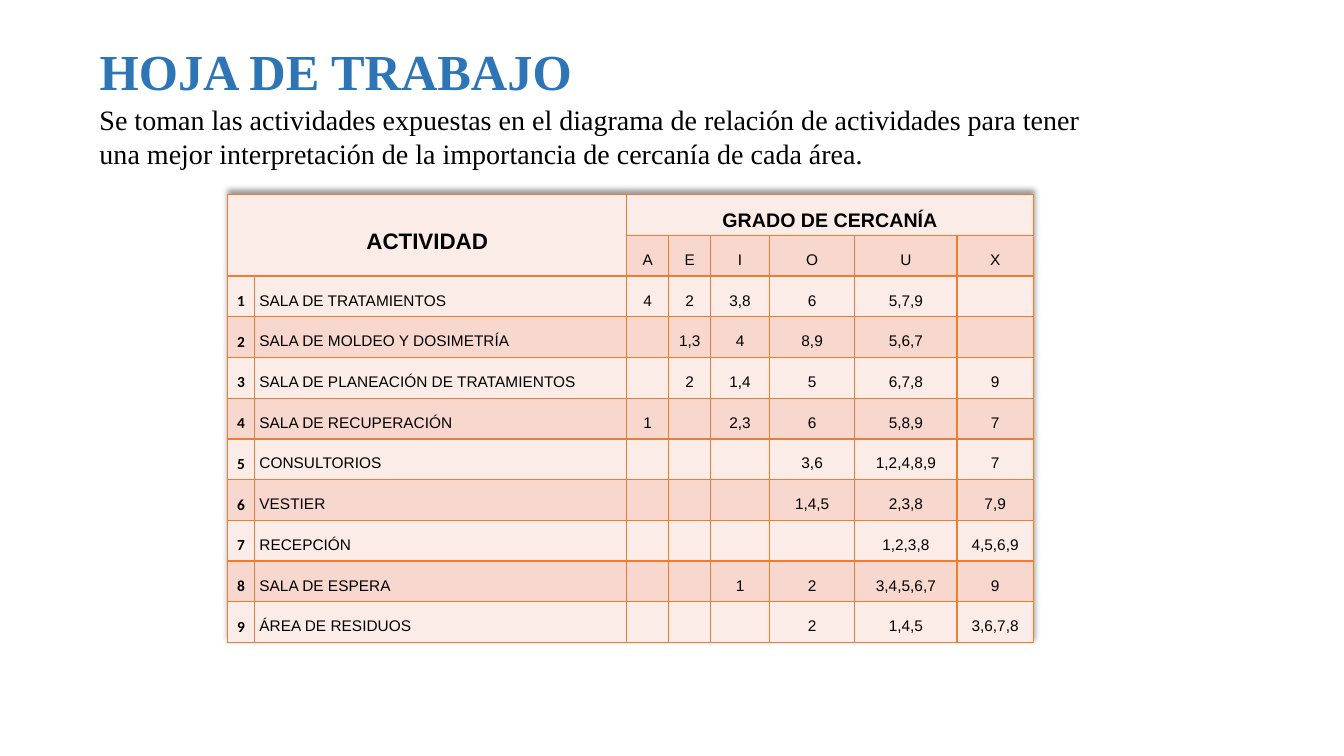
from lxml.etree import SubElement
from pptx import Presentation
from pptx.dml.color import RGBColor
from pptx.enum.text import MSO_ANCHOR, PP_ALIGN
from pptx.oxml.ns import qn
from pptx.util import Pt

BLUE = RGBColor(0x2E, 0x75, 0xB6)
BLACK = RGBColor(0, 0, 0)
ORANGE = RGBColor(0xED, 0x7D, 0x31)
LIGHT = RGBColor(0xFC, 0xEC, 0xE8)
DARK = RGBColor(0xF8, 0xD7, 0xCE)

INTRO = ("Se toman las actividades expuestas en el diagrama de relación de "
         "actividades para tener una mejor interpretación de la importancia "
         "de cercanía de cada área.")
GRADES = ["A", "E", "I", "O", "U", "X"]
ACTIVITIES = [
    ("SALA DE TRATAMIENTOS", "4", "2", "3,8", "6", "5,7,9", ""),
    ("SALA DE MOLDEO Y DOSIMETRÍA", "", "1,3", "4", "8,9", "5,6,7", ""),
    ("SALA DE PLANEACIÓN DE TRATAMIENTOS", "", "2", "1,4", "5", "6,7,8", "9"),
    ("SALA DE RECUPERACIÓN", "1", "", "2,3", "6", "5,8,9", "7"),
    ("CONSULTORIOS", "", "", "", "3,6", "1,2,4,8,9", "7"),
    ("VESTIER", "", "", "", "1,4,5", "2,3,8", "7,9"),
    ("RECEPCIÓN", "", "", "", "", "1,2,3,8", "4,5,6,9"),
    ("SALA DE ESPERA", "", "", "1", "2", "3,4,5,6,7", "9"),
    ("ÁREA DE RESIDUOS", "", "", "", "2", "1,4,5", "3,6,7,8"),
]
COL_WIDTHS = [19, 266, 30, 30, 42, 61, 73, 54.5]
ROW_HEIGHT = 29.1


def write(tf, text, size=11, font="Arial", color=BLACK, bold=False,
          align=PP_ALIGN.LEFT, spacing=1.0):
    p = tf.paragraphs[0]
    p.alignment = align
    p.line_spacing = spacing
    r = p.add_run()
    r.text = text
    r.font.size = Pt(size)
    r.font.name = font
    r.font.bold = bold
    r.font.color.rgb = color


def place(sp, left, top, width, height):
    sp.left, sp.top, sp.width, sp.height = map(Pt, (left, top, width, height))


def add_title(s, text):
    sp = s.shapes.title
    place(sp, 64, 25, 526, 51)
    sp.text_frame.vertical_anchor = MSO_ANCHOR.TOP
    write(sp.text_frame, text, size=36, font="Times New Roman", color=BLUE,
          bold=True)


def add_intro(s, text):
    sp = s.shapes.add_textbox(Pt(64), Pt(70), Pt(739), Pt(55.5))
    sp.text_frame.word_wrap = True
    write(sp.text_frame, text, size=20, font="Times New Roman")


def add_shadow(table):
    effects = SubElement(table._tbl.tblPr, qn("a:effectLst"))
    shadow = SubElement(effects, qn("a:outerShdw"), blurRad=str(Pt(4)),
                        dist=str(Pt(3)), dir="16200000", rotWithShape="0")
    color = SubElement(shadow, qn("a:srgbClr"), val=str(BLACK))
    SubElement(color, qn("a:alpha"), val="40000")


def format_cell(cell, color):
    cell.margin_left = cell.margin_right = Pt(3.6)
    cell.margin_top = cell.margin_bottom = 0
    cell.vertical_anchor = MSO_ANCHOR.MIDDLE
    tcPr = cell._tc.get_or_add_tcPr()
    for side in ("lnL", "lnR", "lnT", "lnB"):
        line = SubElement(tcPr, qn(f"a:{side}"), w=str(Pt(1)))
        fill = SubElement(line, qn("a:solidFill"))
        SubElement(fill, qn("a:srgbClr"), val=str(ORANGE))
    cell.fill.solid()
    cell.fill.fore_color.rgb = color


def fill_cell(cell, text, align=PP_ALIGN.CENTER, **fmt):
    if text:
        write(cell.text_frame, text, align=align, spacing=1.5, **fmt)


def add_closeness_table(s):
    n_rows, n_cols = len(ACTIVITIES) + 2, len(COL_WIDTHS)
    table = s.shapes.add_table(n_rows, n_cols, Pt(162.7), Pt(139),
                               Pt(sum(COL_WIDTHS)),
                               Pt(n_rows * ROW_HEIGHT)).table
    table.first_row = table.horz_banding = False
    add_shadow(table)
    for col, width in zip(table.columns, COL_WIDTHS):
        col.width = Pt(width)
    for i, row in enumerate(table.rows):
        row.height = Pt(ROW_HEIGHT)
        for cell in row.cells:
            format_cell(cell, DARK if i % 2 else LIGHT)

    table.cell(0, 0).merge(table.cell(1, 1))
    table.cell(0, 2).merge(table.cell(0, n_cols - 1))
    fill_cell(table.cell(0, 0), "ACTIVIDAD", size=16, bold=True)
    fill_cell(table.cell(0, 2), "GRADO DE CERCANÍA", size=14, bold=True)
    for j, grade in enumerate(GRADES, 2):
        fill_cell(table.cell(1, j), grade)
    for number, (name, *values) in enumerate(ACTIVITIES, 1):
        i = number + 1
        fill_cell(table.cell(i, 0), str(number), font="Calibri", bold=True)
        fill_cell(table.cell(i, 1), name, align=PP_ALIGN.LEFT)
        for j, value in enumerate(values, 2):
            fill_cell(table.cell(i, j), value)


def main():
    prs = Presentation()
    prs.slide_width, prs.slide_height = Pt(960), Pt(540)
    s = prs.slides.add_slide(prs.slide_layouts[5])
    add_title(s, "HOJA DE TRABAJO")
    add_closeness_table(s)
    add_intro(s, INTRO)
    prs.save("out.pptx")


if __name__ == "__main__":
    main()
